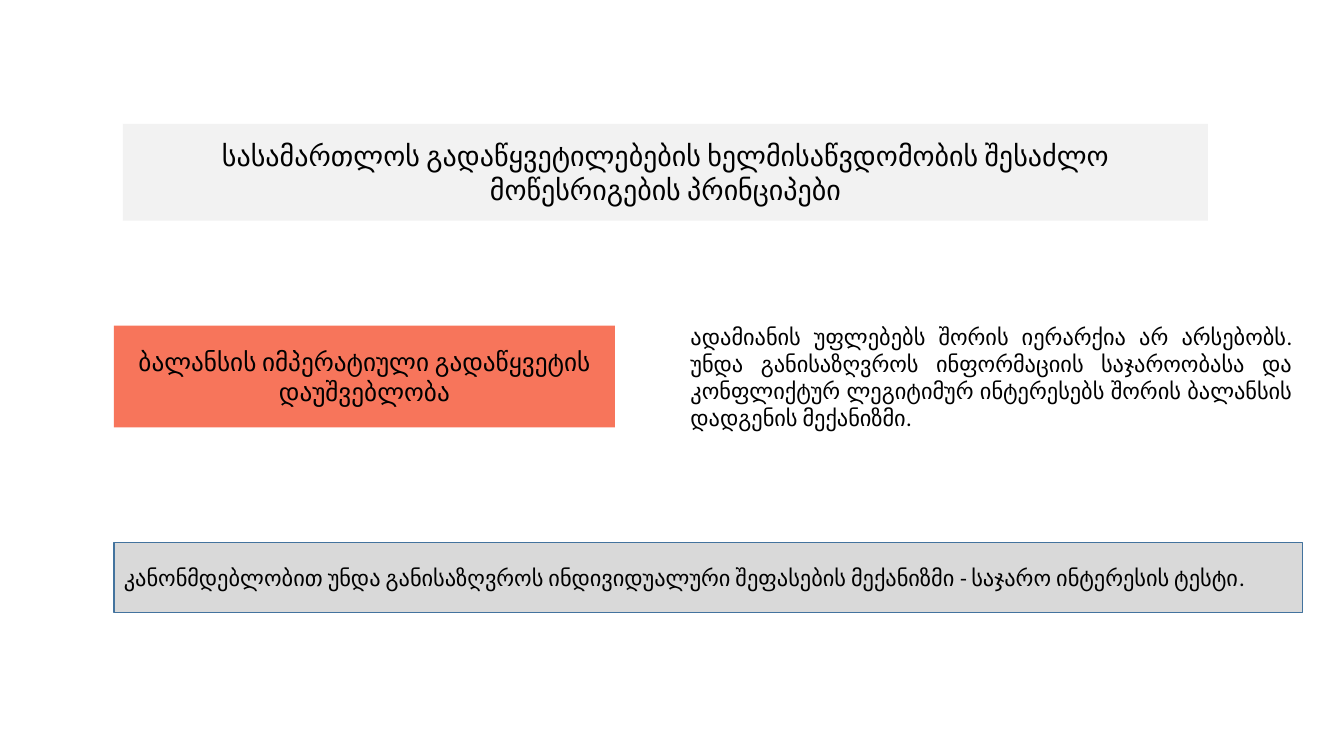
from dataclasses import dataclass
from typing import Optional

from pptx import Presentation
from pptx.dml.color import RGBColor
from pptx.enum.shapes import MSO_SHAPE
from pptx.enum.text import MSO_ANCHOR, PP_ALIGN
from pptx.util import Emu, Pt

EMU_PER_PX = 9144  # 100 px to the inch


@dataclass(frozen=True)
class Theme:
    font: str = "Calibri"
    ink: str = "000000"
    title_fill: str = "F2F2F2"
    principle_fill: str = "F7755B"
    conclusion_fill: str = "D9D9D9"
    conclusion_line: str = "43739E"
    title_size: int = 20
    principle_size: int = 18
    body_size: int = 16


@dataclass(frozen=True)
class Panel:
    text: str
    left: int
    top: int
    width: int
    height: int
    size: int
    align: PP_ALIGN
    fill: Optional[str] = None
    line: Optional[str] = None


THEME = Theme()
LEFT_EDGE = 113

PANELS = (
    # Title
    Panel("სასამართლოს გადაწყვეტილებების ხელმისაწვდომობის შესაძლო მოწესრიგების პრინციპები",
          122, 123, 1076, 96, THEME.title_size, PP_ALIGN.CENTER, THEME.title_fill),
    # Explanation of the principle
    Panel("ადამიანის უფლებებს შორის იერარქია არ არსებობს. უნდა განისაზღვროს "
          "ინფორმაციის საჯაროობასა და კონფლიქტურ ლეგიტიმურ ინტერესებს შორის "
          "ბალანსის დადგენის მექანიზმი.",
          675, 288, 617, 172, THEME.body_size, PP_ALIGN.JUSTIFY),
    # Principle
    Panel("ბალანსის იმპერატიული გადაწყვეტის დაუშვებლობა",
          LEFT_EDGE, 323, 497, 101, THEME.principle_size, PP_ALIGN.CENTER, THEME.principle_fill),
    # Conclusion
    Panel("კანონმდებლობით უნდა განისაზღვროს ინდივიდუალური შეფასების მექანიზმი - "
          "საჯარო ინტერესის ტესტი.",
          LEFT_EDGE, 538, 1179, 70, THEME.body_size, PP_ALIGN.JUSTIFY,
          THEME.conclusion_fill, THEME.conclusion_line),
)


def px(length: int) -> Emu:
    return Emu(length * EMU_PER_PX)


def apply_format(target: object, values: dict[str, object]) -> None:
    for name, value in values.items():
        setattr(target, name, value)


def write_text(frame, panel: Panel) -> None:
    apply_format(frame, {"word_wrap": True, "vertical_anchor": MSO_ANCHOR.MIDDLE})
    paragraph = frame.paragraphs[0]
    paragraph.alignment = panel.align
    run = paragraph.add_run()
    run.text = panel.text
    apply_format(run.font, {"name": THEME.font, "size": Pt(panel.size)})
    run.font.color.rgb = RGBColor.from_string(THEME.ink)


def draw_panel(slide, panel: Panel) -> None:
    bounds = [px(v) for v in (panel.left, panel.top, panel.width, panel.height)]
    if panel.fill is None:
        write_text(slide.shapes.add_textbox(*bounds).text_frame, panel)
        return
    box = slide.shapes.add_shape(MSO_SHAPE.RECTANGLE, *bounds)
    box.shadow.inherit = False
    box.fill.solid()
    box.fill.fore_color.rgb = RGBColor.from_string(panel.fill)
    if panel.line is None:
        box.line.fill.background()
    else:
        box.line.color.rgb = RGBColor.from_string(panel.line)
        box.line.width = Pt(1)
    write_text(box.text_frame, panel)


def main() -> None:
    presentation = Presentation()
    apply_format(presentation, {"slide_width": px(1333), "slide_height": px(750)})
    slide = presentation.slides.add_slide(presentation.slide_layouts[6])
    for panel in PANELS:
        draw_panel(slide, panel)
    presentation.save("out.pptx")


if __name__ == "__main__":
    main()
